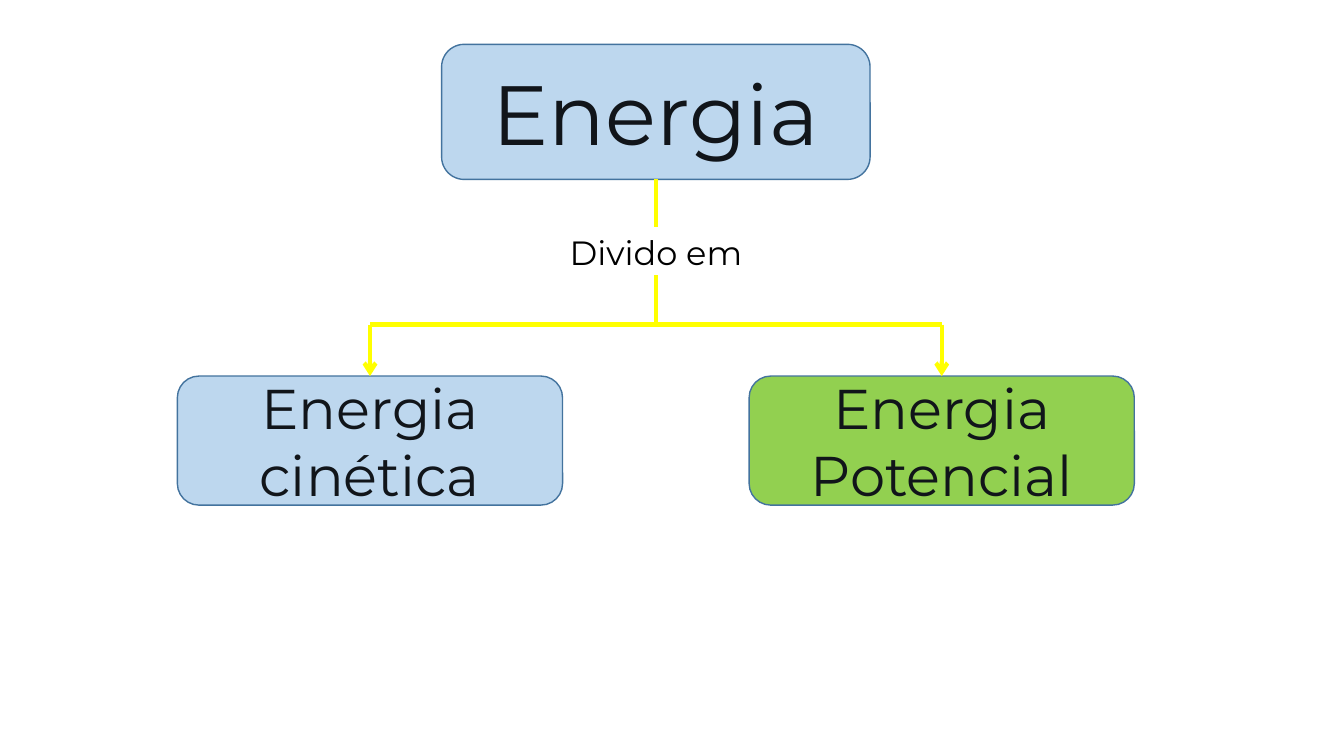
"""Build a concept map that splits energy into kinetic and potential."""
from dataclasses import dataclass

from lxml.etree import SubElement
from pptx import Presentation
from pptx.dml.color import RGBColor
from pptx.enum.shapes import MSO_CONNECTOR as Connector, MSO_SHAPE as Preset
from pptx.enum.text import MSO_ANCHOR as Anchor, PP_ALIGN as Align
from pptx.oxml.ns import qn
from pptx.shapes.autoshape import Shape
from pptx.shapes.connector import Connector as Link
from pptx.slide import Slide
from pptx.util import Inches, Pt

WIDTH, HEIGHT = Inches(13.33), Inches(7.5)
FONT = "Montserrat"
LIGHT_BLUE = RGBColor(0xBD, 0xD7, 0xEE)
GREEN = RGBColor(0x92, 0xD0, 0x50)
OUTLINE = RGBColor(0x43, 0x73, 0x9E)
YELLOW = RGBColor(0xFF, 0xFF, 0x00)
INK = RGBColor(0x11, 0x15, 0x1A)
BLACK = RGBColor(0x00, 0x00, 0x00)
TOP, BOTTOM = 0, 2

# Percentages of the slide's width and height
AXIS, BRANCH_OFFSET = 48.8, 21.27
LABEL_TOP, LABEL_BOTTOM = 30, 36.4
BUS, BRANCH_TOP = 42.93, 49.75


@dataclass(frozen=True)
class Concept:
    """A box placed by its centre and top, in percent of the slide."""

    text: str
    center: float
    top: float
    width: float
    height: float
    size: int
    fill: RGBColor


ENERGY = Concept("Energia", AXIS, 5.87, 31.88, 17.87, 60, LIGHT_BLUE)
BRANCHES = [
    Concept(text, AXIS + side * BRANCH_OFFSET, BRANCH_TOP, 28.66, 17.07, 40, fill)
    for text, side, fill in (
        ("Energia cinética", -1, LIGHT_BLUE),
        ("Energia Potencial", 1, GREEN),
    )
]


def across(percent: float) -> int:
    """Return a share of the slide's width."""
    return round(WIDTH * percent / 100)


def down(percent: float) -> int:
    """Return a share of the slide's height."""
    return round(HEIGHT * percent / 100)


def write(shape: Shape, text: str, size: int, color: RGBColor) -> None:
    """Put centred text into a shape."""
    frame = shape.text_frame
    frame.text = text
    frame.word_wrap = True
    frame.vertical_anchor = Anchor.MIDDLE
    paragraph = frame.paragraphs[0]
    paragraph.alignment = Align.CENTER
    font = paragraph.runs[0].font
    font.name, font.size, font.color.rgb = FONT, Pt(size), color


def draw_concept(slide: Slide, concept: Concept) -> Shape:
    """Draw a rounded concept box."""
    box = slide.shapes.add_shape(
        Preset.ROUNDED_RECTANGLE,
        across(concept.center - concept.width / 2), down(concept.top),
        across(concept.width), down(concept.height),
    )
    box.shadow.inherit = False
    box.fill.solid()
    box.fill.fore_color.rgb = concept.fill
    box.line.color.rgb = OUTLINE
    box.line.width = Pt(1)
    write(box, concept.text, concept.size, INK)
    return box


def draw_link(slide: Slide, start: tuple[float, float], end: tuple[float, float],
              arrow: bool = False) -> Link:
    """Draw a yellow line between two points given in percent."""
    link = slide.shapes.add_connector(
        Connector.STRAIGHT,
        across(start[0]), down(start[1]), across(end[0]), down(end[1]),
    )
    link.line.color.rgb = YELLOW
    link.line.width = Pt(3)
    if arrow:
        SubElement(link.line._get_or_add_ln(), qn("a:tailEnd"), type="arrow")
    SubElement(link._element.spPr, qn("a:effectLst"))
    return link


def main() -> None:
    """Build and save the slide."""
    deck = Presentation()
    deck.slide_width, deck.slide_height = WIDTH, HEIGHT
    slide = deck.slides.add_slide(deck.slide_layouts[6])

    energy = draw_concept(slide, ENERGY)
    stem = draw_link(slide, (AXIS, ENERGY.top + ENERGY.height), (AXIS, LABEL_TOP))
    stem.begin_connect(energy, BOTTOM)

    label = slide.shapes.add_textbox(
        across(AXIS - 7.65), down(27.07), across(15.3), down(12.53))
    write(label, "Divido em", 24, BLACK)
    draw_link(slide, (AXIS, LABEL_BOTTOM), (AXIS, BUS))

    for branch in BRANCHES:
        box = draw_concept(slide, branch)
        draw_link(slide, (AXIS, BUS), (branch.center, BUS))
        arrow = draw_link(
            slide, (branch.center, BUS), (branch.center, branch.top), arrow=True)
        arrow.end_connect(box, TOP)

    deck.save("out.pptx")


if __name__ == "__main__":
    main()
